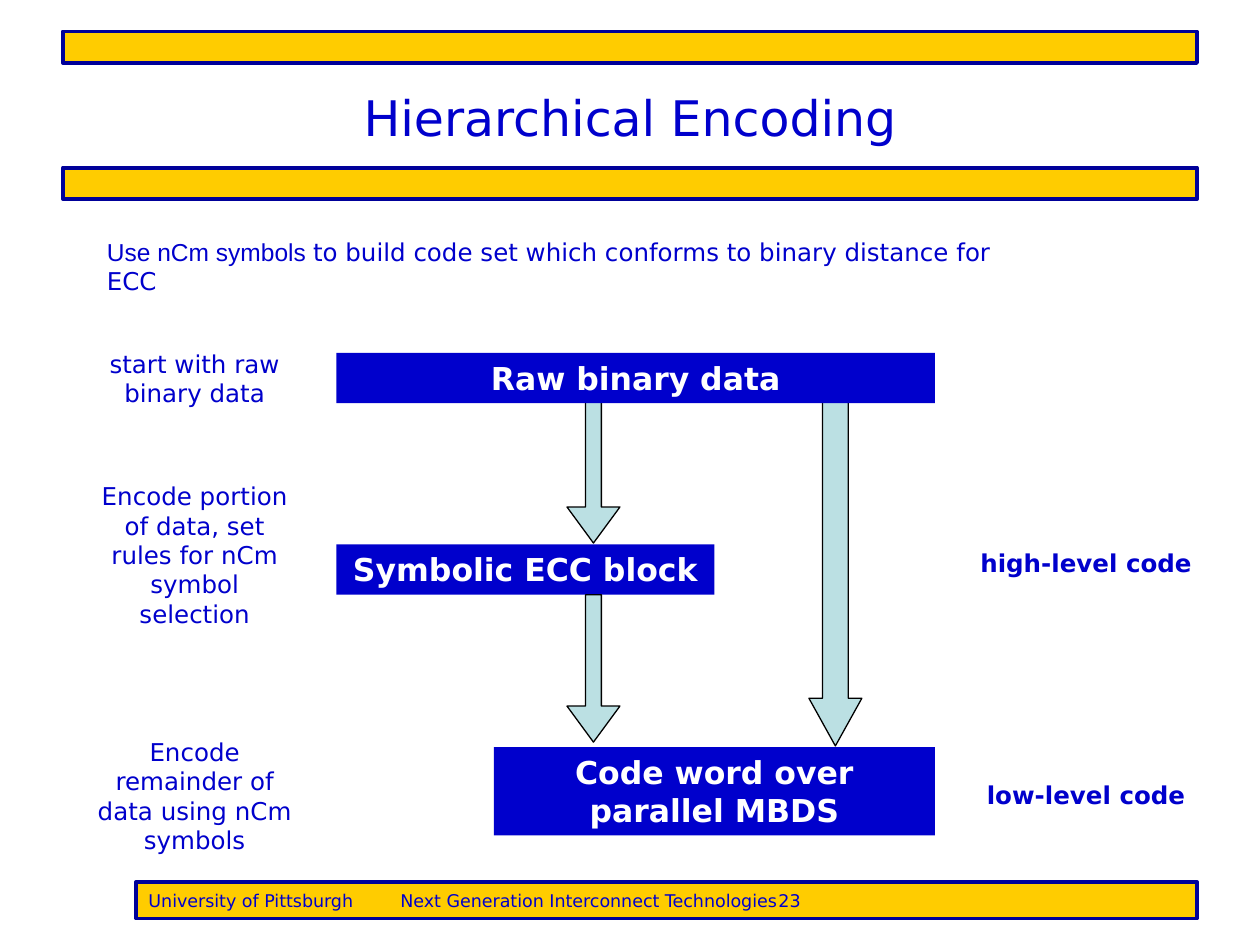
from pptx import Presentation
from pptx.dml.color import RGBColor
from pptx.enum.shapes import MSO_SHAPE as SHAPE
from pptx.enum.text import MSO_ANCHOR as ANCHOR, PP_ALIGN as ALIGN
from pptx.util import Inches, Pt

BLUE, NAVY, GOLD, WHITE = "0000CC", "000099", "FFCC00", "FFFFFF"
TEAL, BLACK = "BBE0E3", "000000"
SANS = "DejaVu Sans"


def rgb(value):
    """Turn a hex string into a colour."""
    return RGBColor.from_string(value)


def add_shape(slide, kind, box, fill, line=None, width=0.75):
    """Draw a flat preset shape in a box given in inches."""
    s = slide.shapes.add_shape(kind, *map(Inches, box))
    s.shadow.inherit = False
    s.fill.solid()
    s.fill.fore_color.rgb = rgb(fill)
    if line:
        s.line.color.rgb = rgb(line)
        s.line.width = Pt(width)
    else:
        s.line.fill.background()
    return s


def write(s, runs, size, color=BLUE, bold=False, align=ALIGN.CENTER, anchor=ANCHOR.TOP):
    """Fill a shape with one paragraph of (text, font) runs."""
    tf = s.text_frame
    tf.word_wrap = True
    tf.vertical_anchor = anchor
    p = tf.paragraphs[0]
    p.alignment = align
    for text, font in runs:
        r = p.add_run()
        r.text = text
        r.font.name = font
        r.font.size = Pt(size)
        r.font.bold = bold
        r.font.color.rgb = rgb(color)


def add_text(slide, box, runs, size, **style):
    """Place a text box in a box given in inches."""
    write(slide.shapes.add_textbox(*map(Inches, box)), runs, size, **style)


def add_bar(slide, box):
    """Draw a gold bar with a navy outline."""
    return add_shape(slide, SHAPE.RECTANGLE, box, GOLD, NAVY, 2.25)


def add_header(slide, box, title):
    """Place the title between two gold bars."""
    left, top, width, height = box
    bar = 0.25
    for y in (top, top + height - bar):
        add_bar(slide, (left, y, width, bar))
    add_text(slide, (left, top + 0.05, width, 1.25), [(title, SANS)], 28,
             anchor=ANCHOR.MIDDLE)


def add_footer(slide, box, parts):
    """Place the footer bar with its tab-separated parts."""
    write(add_bar(slide, box), [("\t".join(parts), SANS)], 10,
          align=ALIGN.LEFT, anchor=ANCHOR.MIDDLE)


def add_arrow(slide, box, shaft, head):
    """Draw a block arrow pointing down."""
    s = add_shape(slide, SHAPE.DOWN_ARROW, box, TEAL, BLACK)
    s.adjustments[0] = shaft
    s.adjustments[1] = head


def add_flow(slide, box):
    """Draw the encoding blocks and the arrows between them."""
    left, top, width, height = box
    bottom = top + height
    add_arrow(slide, (left + 3.75, top + 0.37, 0.42, 2.75), 0.49, 0.9)
    add_arrow(slide, (left + 1.83, top + 0.34, 0.42, 1.17), 0.3, 0.68)
    blocks = [
        ((left, top, width, 0.4), "Raw binary data"),
        ((left, top + 1.52, 3, 0.4), "Symbolic ECC block"),
        ((left + width - 3.5, bottom - 0.7, 3.5, 0.7), "Code word over parallel MBDS"),
    ]
    for place, text in blocks:
        s = add_shape(slide, SHAPE.RECTANGLE, place, BLUE)
        write(s, [(text, SANS)], 18, color=WHITE, bold=True)
    add_arrow(slide, (left + 1.83, top + 1.92, 0.42, 1.17), 0.3, 0.68)


def add_labels(slide, left, width, labels, bold=False):
    """Place a column of labels, each with its own top and height."""
    for top, height, text in labels:
        add_text(slide, (left, top, width, height), [(text, SANS)], 14, bold=bold)


def main():
    """Build the slide and save it."""
    prs = Presentation()
    prs.slide_width, prs.slide_height = Inches(10), Inches(7.5)
    slide = prs.slides.add_slide(prs.slide_layouts[6])
    add_header(slide, (0.5, 0.25, 9, 1.33), "Hierarchical Encoding")
    add_footer(slide, (1.08, 7, 8.42, 0.29),
               ["University of Pittsburgh", "Next Generation Interconnect Technologies", "23"])
    add_text(slide, (0.75, 1.83, 7.67, 0.57),
             [("Use nCm symbols ", "Arial"),
              ("to build code set which conforms to binary distance for ECC", SANS)],
             14, align=ALIGN.LEFT)
    add_flow(slide, (2.67, 2.8, 4.75, 3.83))
    add_labels(slide, 0.67, 1.75, [
        (2.72, 0.57, "start with raw binary data"),
        (3.77, 1.26, "Encode portion of data, set rules for nCm symbol selection"),
        (5.8, 1.03, "Encode remainder of data using nCm symbols"),
    ])
    add_labels(slide, 7.58, 2.08, [
        (4.3, 0.33, "high-level code"),
        (6.14, 0.33, "low-level code"),
    ], bold=True)
    prs.save("out.pptx")


if __name__ == "__main__":
    main()
